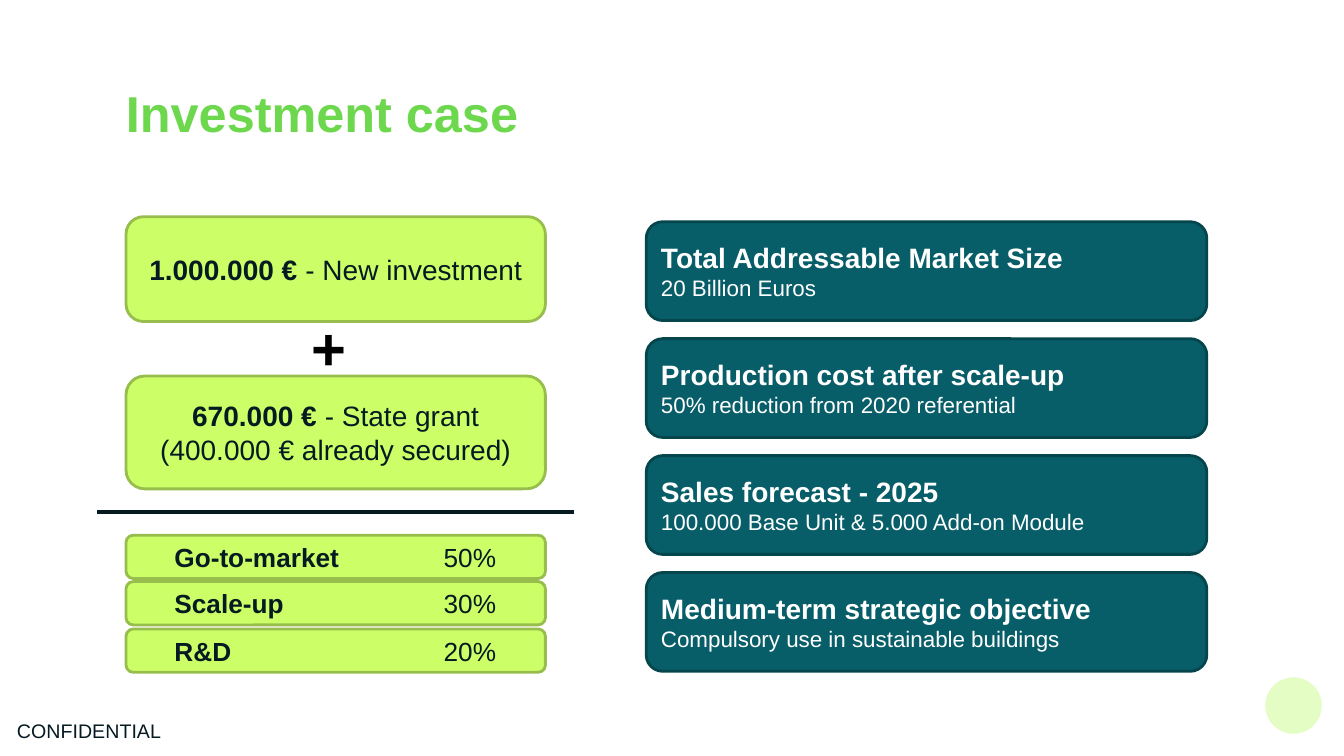
from lxml.etree import SubElement
from pptx import Presentation
from pptx.dml.color import RGBColor
from pptx.enum.shapes import MSO_CONNECTOR as Connector, MSO_SHAPE as Shape
from pptx.enum.text import MSO_ANCHOR as Anchor, PP_ALIGN as Align
from pptx.oxml.ns import qn
from pptx.util import Pt

PX = 9144
INK = "061A22"
LIME = ("CCFF67", "97BD4C")
TEAL = ("075E68", "05464D")

FUNDING = [
    (215, 104, [[("1.000.000 € ", True), ("- New investment", False)]]),
    (373, 112, [[("670.000 € ", True), ("- State grant", False)],
                [("(400.000 € already secured)", False)]]),
]
ALLOCATION = [("Go-to-market", "50%"), ("Scale-up", "30%"), ("R&D", "20%")]
HIGHLIGHTS = [
    ("Total Addressable Market Size", "20 Billion Euros"),
    ("Production cost after scale-up", "50% reduction from 2020 referential"),
    ("Sales forecast - 2025", "100.000 Base Unit & 5.000 Add-on Module"),
    ("Medium-term strategic objective", "Compulsory use in sustainable buildings"),
]


def px(*lengths):
    """Turn px lengths into EMU."""
    return [length * PX for length in lengths]


def paint(color_format, color):
    """Set a colour format to a hex colour."""
    color_format.rgb = RGBColor.from_string(color)


def add_run(paragraph, text, size=20, color=INK, bold=False):
    """Append a formatted run to a paragraph."""
    run = paragraph.add_run()
    run.text = text
    run.font.name = "Arial"
    run.font.size = Pt(size)
    run.font.bold = bold
    paint(run.font.color, color)


def add_paragraph(frame, first, align=Align.LEFT):
    """Return the first paragraph of a frame or a new one."""
    paragraph = frame.paragraphs[0] if first else frame.add_paragraph()
    paragraph.alignment = align
    return paragraph


def add_tab(paragraph, position):
    """Give a paragraph one left tab stop."""
    tabs = SubElement(paragraph._p.get_or_add_pPr(), qn("a:tabLst"))
    SubElement(tabs, qn("a:tab"), pos=str(position * PX), algn="l")


def add_label(slide, box, text, **style):
    """Add a wrapping text box with one run and return its frame."""
    frame = slide.shapes.add_textbox(*px(*box)).text_frame
    frame.word_wrap = True
    add_run(frame.paragraphs[0], text, **style)
    return frame


def add_title(slide, text):
    """Add the slide heading, resting on the bottom of its box."""
    frame = add_label(slide, (125, 84, 1084, 58), text, size=36, color="6DD84D", bold=True)
    frame.margin_left = frame.margin_right = frame.margin_top = frame.margin_bottom = 0
    frame.vertical_anchor = Anchor.BOTTOM
    frame.paragraphs[0].line_spacing = 0.9


def add_card(slide, box, colors):
    """Add a rounded card and return its text frame."""
    shape = slide.shapes.add_shape(Shape.ROUNDED_RECTANGLE, *px(*box))
    shape.shadow.inherit = False
    shape.fill.solid()
    paint(shape.fill.fore_color, colors[0])
    paint(shape.line.color, colors[1])
    shape.line.width = Pt(2)
    frame = shape.text_frame
    frame.word_wrap = True
    frame.vertical_anchor = Anchor.MIDDLE
    return frame


def add_funding(slide, top, height, lines):
    """Add a lime card with centred lines of mixed weight."""
    frame = add_card(slide, (125, top, 416, height), LIME)
    for index, line in enumerate(lines):
        paragraph = add_paragraph(frame, index == 0, Align.CENTER)
        for text, bold in line:
            add_run(paragraph, text, bold=bold)


def add_allocation(slide, top, purpose, share):
    """Add a thin lime card with a purpose and its share."""
    frame = add_card(slide, (125, top, 416, 43), LIME)
    frame.margin_left = 46 * PX
    paragraph = add_paragraph(frame, True)
    add_tab(paragraph, 267)
    add_run(paragraph, purpose + "\t", size=18.7, bold=True)
    add_run(paragraph, share, size=18.7)


def add_highlight(slide, top, heading, detail):
    """Add a teal card with a heading and a detail line."""
    frame = add_card(slide, (641, top, 556, 98), TEAL)
    add_run(add_paragraph(frame, True), heading, color="FFFFFF", bold=True)
    add_run(add_paragraph(frame, False), detail, size=16, color="FFFFFF")


def add_rule(slide, left, right, top):
    """Add a horizontal dividing line."""
    line = slide.shapes.add_connector(Connector.STRAIGHT, *px(left, top, right, top))
    paint(line.line.color, INK)
    line.line.width = Pt(2.25)
    SubElement(line._element.spPr, qn("a:effectLst"))


def add_dot(slide, box, color):
    """Add a plain filled circle."""
    dot = slide.shapes.add_shape(Shape.OVAL, *px(*box))
    dot.shadow.inherit = False
    dot.fill.solid()
    paint(dot.fill.fore_color, color)
    dot.line.fill.background()


def main():
    """Build the investment case slide."""
    presentation = Presentation()
    presentation.slide_width, presentation.slide_height = px(1333, 750)
    slide = presentation.slides.add_slide(presentation.slide_layouts[6])
    add_dot(slide, (1255, 672, 56, 56), "E4FDC4")
    add_title(slide, "Investment case")
    for top, height, lines in FUNDING:
        add_funding(slide, top, height, lines)
    for index, (purpose, share) in enumerate(ALLOCATION):
        add_allocation(slide, 531 + index * 93 // 2, purpose, share)
    add_label(slide, (299, 303, 87, 82), "+", size=42.7, color="000000", bold=True)
    add_rule(slide, 96, 569, 508)
    for index, (heading, detail) in enumerate(HIGHLIGHTS):
        add_highlight(slide, 220 + index * 116, heading, detail)
    add_label(slide, (7, 708, 255, 34), "CONFIDENTIAL", size=14)
    presentation.save("out.pptx")


if __name__ == "__main__":
    main()
